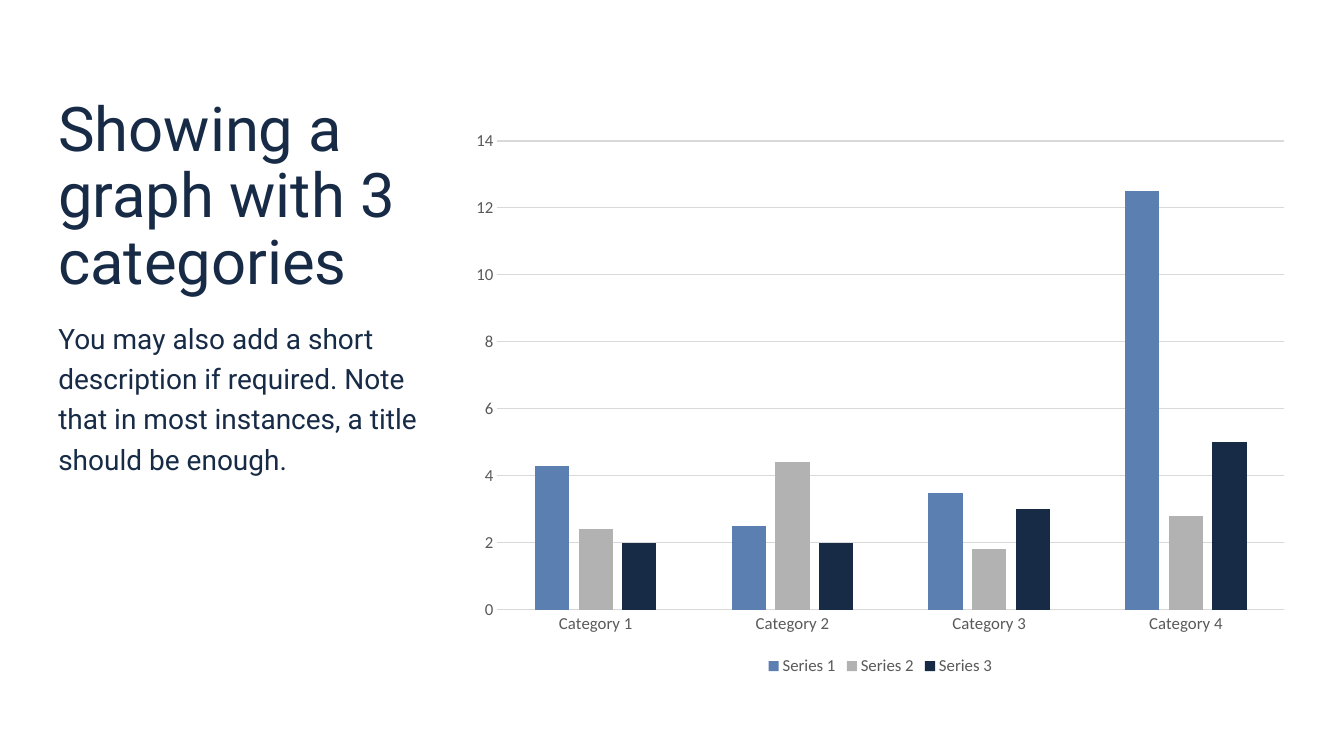
from dataclasses import dataclass

import pptx
import pptx.chart.data
import pptx.dml.color
import pptx.enum.chart
import pptx.enum.text
import pptx.util
from pptx.util import Cm


@dataclass(frozen=True)
class Theme:
    """Colours, fonts and type sizes of the slide."""
    navy: str = "172B46"
    blue: str = "5B7FB1"
    silver: str = "B2B2B2"
    grid: str = "D9D9D9"
    label: str = "595959"
    background: str = "FFFFFF"
    text_font: str = "Roboto"
    chart_font: str = "Calibri"
    title_size: int = 44
    body_size: int = 20
    label_size: int = 12
    line_width: float = 0.75


THEME = Theme()
CATEGORIES = ["Category 1", "Category 2", "Category 3", "Category 4"]
SERIES = [
    ("Series 1", (4.3, 2.5, 3.5, 12.5), THEME.blue),
    ("Series 2", (2.4, 4.4, 1.8, 2.8), THEME.silver),
    ("Series 3", (2, 2, 3, 5), THEME.navy),
]


def style_font(font, name, size, colour):
    """Set the typeface, size and colour of a font."""
    font.name = name
    font.size = pptx.util.Pt(size)
    font.bold = False
    font.color.rgb = pptx.dml.color.RGBColor.from_string(colour)


def fill_solid(fill, colour):
    """Fill with one plain colour."""
    fill.solid()
    fill.fore_color.rgb = pptx.dml.color.RGBColor.from_string(colour)


def style_line(line):
    """Draw a line in the thin grid style."""
    fill_solid(line.fill, THEME.grid)
    line.width = pptx.util.Pt(THEME.line_width)


def add_text(page, text, top, height, size, spacing):
    """Add one paragraph in the left column."""
    box = page.shapes.add_textbox(Cm(1.22), top, Cm(9.6), height)
    frame = box.text_frame
    frame.word_wrap = True
    frame.vertical_anchor = pptx.enum.text.MSO_ANCHOR.TOP
    para = frame.paragraphs[0]
    para.line_spacing = spacing
    span = para.add_run()
    span.text = text
    style_font(span.font, THEME.text_font, size, THEME.navy)


def style_axis(axis):
    """Give an axis plain labels without tick marks."""
    axis.major_tick_mark = pptx.enum.chart.XL_TICK_MARK.NONE
    axis.minor_tick_mark = pptx.enum.chart.XL_TICK_MARK.NONE
    style_font(axis.tick_labels.font, THEME.chart_font, THEME.label_size, THEME.label)


def add_column_chart(page):
    """Add the clustered column chart with its legend."""
    data = pptx.chart.data.CategoryChartData()
    data.categories = CATEGORIES
    for name, values, _ in SERIES:
        data.add_series(name, values)
    chart = page.shapes.add_chart(
        pptx.enum.chart.XL_CHART_TYPE.COLUMN_CLUSTERED,
        Cm(11.58), Cm(3.02), Cm(21.21), Cm(14.12), data,
    ).chart
    style_font(chart.font, THEME.chart_font, THEME.label_size, THEME.label)
    chart.has_title = False

    plot = chart.plots[0]
    plot.gap_width = 219
    plot.overlap = -27
    plot.vary_by_categories = False
    for series, (_, _, colour) in zip(plot.series, SERIES):
        fill_solid(series.format.fill, colour)

    style_axis(chart.category_axis)
    style_line(chart.category_axis.format.line)
    value_axis = chart.value_axis
    style_axis(value_axis)
    value_axis.minimum_scale = 0
    value_axis.maximum_scale = 14
    value_axis.major_unit = 2
    value_axis.format.line.fill.background()
    style_line(value_axis.major_gridlines.format.line)

    chart.has_legend = True
    chart.legend.position = pptx.enum.chart.XL_LEGEND_POSITION.BOTTOM
    chart.legend.include_in_layout = False
    style_font(chart.legend.font, THEME.chart_font, THEME.label_size, THEME.label)


def main():
    """Build and save the slide."""
    deck = pptx.Presentation()
    deck.slide_width = Cm(33.87)
    deck.slide_height = Cm(19.05)
    page = deck.slides.add_slide(deck.slide_layouts[6])
    fill_solid(page.background.fill, THEME.background)
    add_column_chart(page)
    add_text(page, "Showing a graph with 3 categories",
             Cm(2.34), Cm(9.45), THEME.title_size, 0.9)
    add_text(page, "You may also add a short description if required. "
             "Note that in most instances, a title should be enough.",
             Cm(7.8), Cm(6.5), THEME.body_size, 1.2)
    deck.save("out.pptx")


if __name__ == "__main__":
    main()
